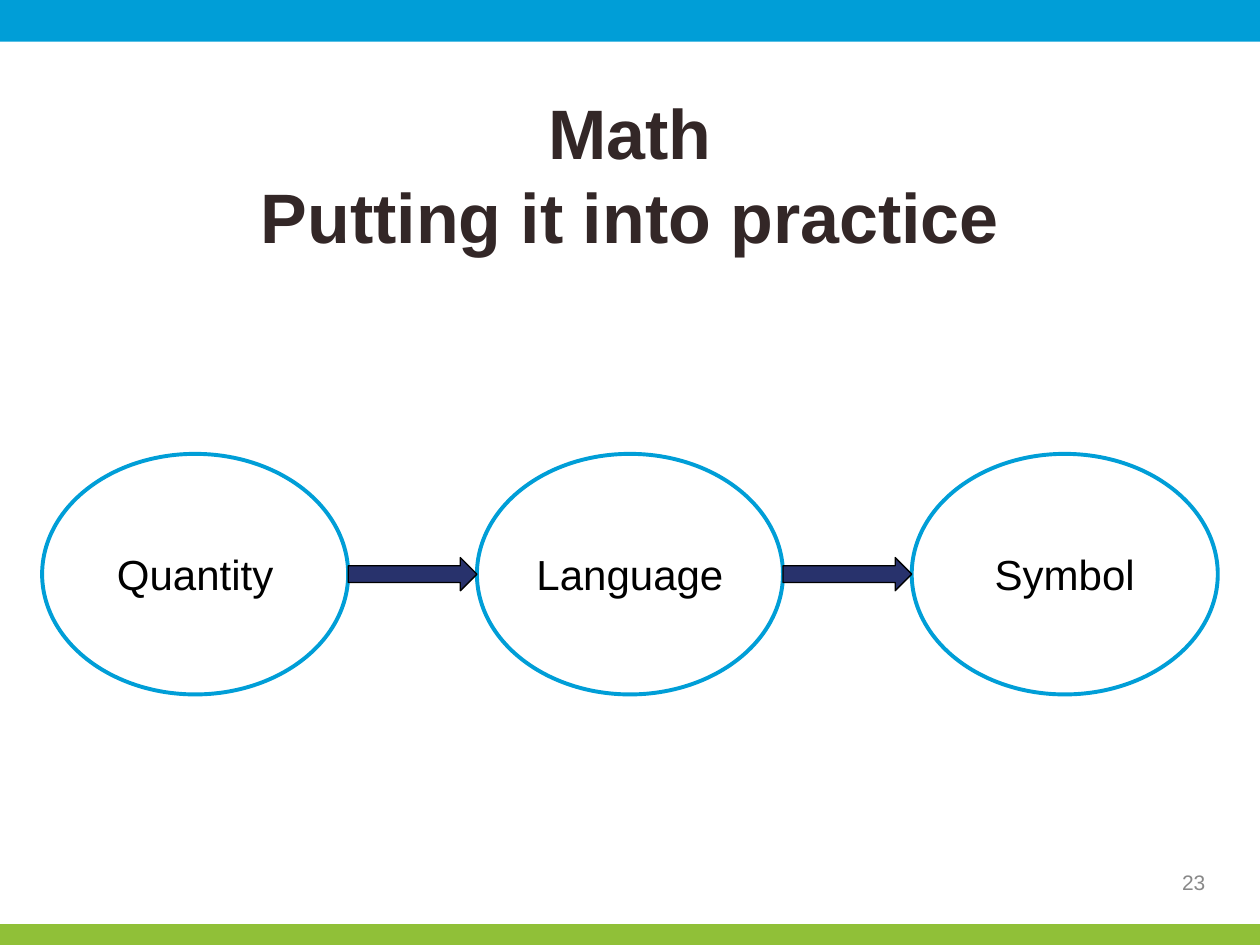
from pptx import Presentation
from pptx.dml.color import RGBColor
from pptx.enum.shapes import MSO_SHAPE
from pptx.enum.text import MSO_ANCHOR, PP_ALIGN
from pptx.util import Cm, Pt

COLORS = {
    "blue": "009ED7",
    "green": "90C038",
    "navy": "28326C",
    "title": "332727",
    "black": "000000",
    "gray": "888888",
}
FONT = "Arial"
STEPS = ["Quantity", "Language", "Symbol"]


def rgb(name):
    """Return the named palette colour."""
    return RGBColor.from_string(COLORS[name])


def add_shape(s, kind, box, fill=None, line=None, weight=0.75):
    """Add a flat shape with an optional fill and outline."""
    sp = s.shapes.add_shape(kind, *map(Cm, box))
    sp.shadow.inherit = False
    if fill:
        sp.fill.solid()
        sp.fill.fore_color.rgb = rgb(fill)
    else:
        sp.fill.background()
    if line:
        sp.line.color.rgb = rgb(line)
        sp.line.width = Pt(weight)
    else:
        sp.line.fill.background()
    return sp


def write(sp, text, size, color, align=PP_ALIGN.CENTER, bold=False):
    """Fill a shape with vertically centred paragraphs."""
    tf = sp.text_frame
    tf.word_wrap = True
    tf.vertical_anchor = MSO_ANCHOR.MIDDLE
    tf.text = text
    for p in tf.paragraphs:
        p.alignment = align
        p.font.name = FONT
        p.font.size = Pt(size)
        p.font.bold = bold
        p.font.color.rgb = rgb(color)
    return tf


def add_bands(s, width, height):
    """Draw the top and bottom bands across the slide."""
    top, bottom = 0.84, 0.42
    add_shape(s, MSO_SHAPE.RECTANGLE, (0, 0, width, top), "blue")
    add_shape(s, MSO_SHAPE.RECTANGLE, (0, height - bottom, width, bottom), "green")


def add_title(s, box):
    """Place the two-line heading."""
    sp = s.shapes.add_textbox(*map(Cm, box))
    tf = write(sp, "Math\nPutting it into practice", 40, "title", bold=True)
    for p in tf.paragraphs:
        p.line_spacing = Pt(48)


def add_page_number(s, box):
    """Place the page number at the right of its box."""
    sp = s.shapes.add_textbox(*map(Cm, box))
    write(sp, "23", 12, "gray", PP_ALIGN.RIGHT)


def add_flow(s, box):
    """Spread the steps over the box and join them with arrows."""
    left, top, width, height = box
    oval_w, arrow_h = 6.17, 0.67
    pitch = (width - oval_w) / (len(STEPS) - 1)
    for i, step in enumerate(STEPS):
        oval = add_shape(s, MSO_SHAPE.OVAL, (left + i * pitch, top, oval_w, height),
                         line="blue", weight=2.25)
        write(oval, step, 24, "black")
    for i in range(len(STEPS) - 1):
        arrow_box = (left + i * pitch + oval_w, top + (height - arrow_h) / 2,
                     pitch - oval_w, arrow_h)
        add_shape(s, MSO_SHAPE.RIGHT_ARROW, arrow_box, "navy", "black")


def main():
    """Build and save the slide."""
    width, height, margin = 25.4, 19.05, 0.85
    prs = Presentation()
    prs.slide_width, prs.slide_height = Cm(width), Cm(height)
    s = prs.slides.add_slide(prs.slide_layouts[6])
    inner = width - 2 * margin
    add_bands(s, width, height)
    add_title(s, (margin, 2.12, inner, 2.75))
    add_page_number(s, (18.85, 17.27, 5.7, 1.02))
    add_flow(s, (margin, 9.15, inner, 4.85))
    prs.save("out.pptx")


if __name__ == "__main__":
    main()
